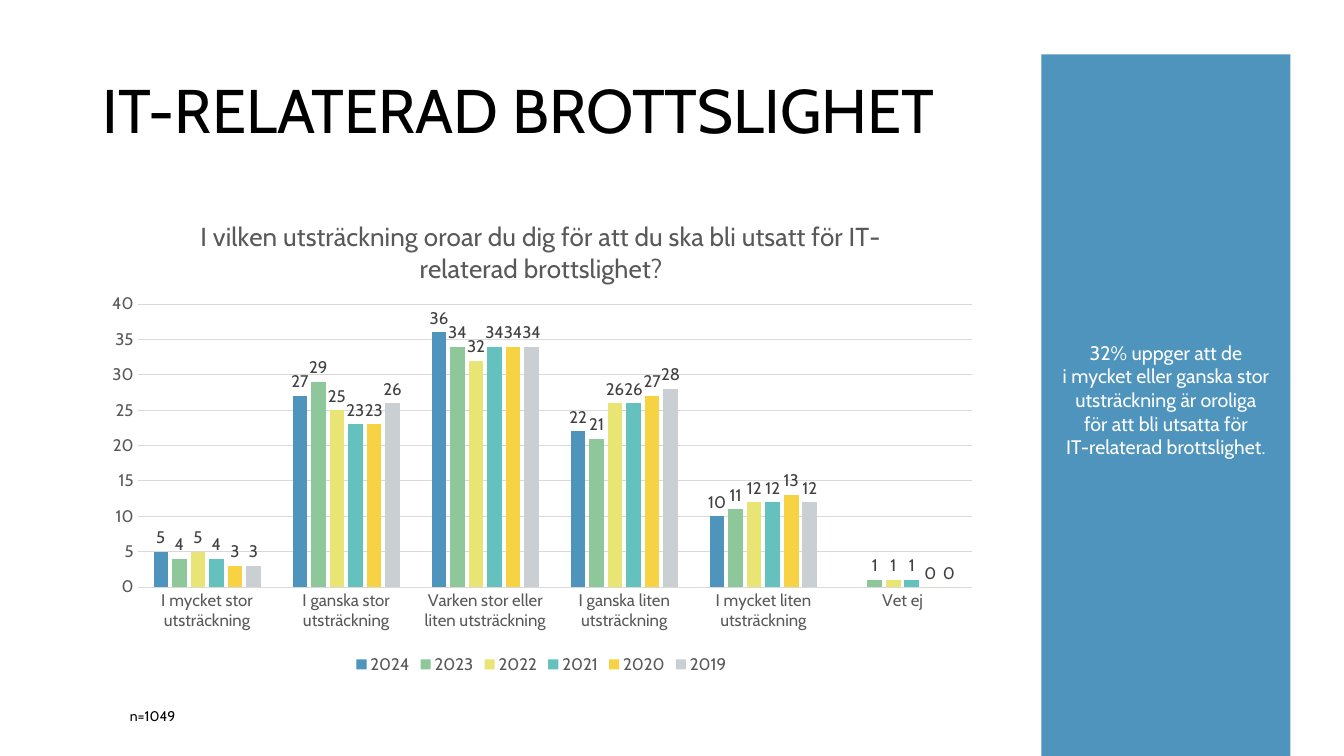
import pptx
import pptx.chart.data
import pptx.dml.color
import pptx.enum.chart
import pptx.enum.shapes
import pptx.enum.text
import pptx.oxml
import pptx.oxml.ns
import pptx.util

FONT = "Cabin"
WIDTH, HEIGHT = pptx.util.Inches(13.33), pptx.util.Inches(7.5)
COLUMNS = ROWS = 100
BLACK, WHITE, GREY, DARK_GREY, LIGHT_GREY = "000000", "FFFFFF", "595959", "404040", "D9D9D9"
BLUE = "4E94BD"

QUESTION = (
    "I vilken utsträckning oroar du dig för att du ska bli utsatt för "
    "IT-relaterad brottslighet?"
)
FINDING = (
    "32% uppger att de\v"
    "i mycket eller ganska stor utsträckning är oroliga\v"
    "för att bli utsatta för\v"
    "IT-relaterad brottslighet."
)
ANSWERS = [
    "I mycket stor utsträckning",
    "I ganska stor utsträckning",
    "Varken stor eller liten utsträckning",
    "I ganska liten utsträckning",
    "I mycket liten utsträckning",
    "Vet ej",
]
YEARS = {
    "2024": (BLUE, [5, 27, 36, 22, 10, None]),
    "2023": ("8DC79A", [4, 29, 34, 21, 11, 1]),
    "2022": ("E8E575", [5, 25, 32, 26, 12, 1]),
    "2021": ("65C1BE", [4, 23, 34, 26, 12, 1]),
    "2020": ("F7D243", [3, 23, 34, 27, 13, 0]),
    "2019": ("CACFD3", [3, 26, 34, 28, 12, 0]),
}
PLOT_AREA = {"x": 0.05, "y": 0.22, "w": 0.93, "h": 0.59}


def grid_box(left, top, columns, rows):
    column, row = WIDTH / COLUMNS, HEIGHT / ROWS
    return [round(length) for length in (left * column, top * row, columns * column, rows * row)]


def set_values(target, values):
    for name, value in values.items():
        setattr(target, name, value)


def paint(color_format, color):
    color_format.rgb = pptx.dml.color.RGBColor.from_string(color)


def style_font(font, size, color):
    set_values(font, {"name": FONT, "size": pptx.util.Pt(size), "bold": False})
    paint(font.color, color)


def style_line(line, color):
    line.width = pptx.util.Pt(0.75)
    line.fill.solid()
    paint(line.fill.fore_color, color)


def write_text(shape, text, size, color, paragraph_values, frame_values):
    frame = shape.text_frame
    set_values(frame, {"word_wrap": True, **frame_values})
    paragraph = frame.paragraphs[0]
    paragraph.text = text
    set_values(paragraph, paragraph_values)
    for run in paragraph.runs:
        style_font(run.font, size, color)


def add_heading(slide, box):
    write_text(
        slide.shapes.add_textbox(*box), "IT-RELATERAD BROTTSLIGHET", 44, BLACK,
        {"line_spacing": 0.9},
        {"vertical_anchor": pptx.enum.text.MSO_ANCHOR.MIDDLE},
    )


def add_sample_note(slide, box):
    write_text(slide.shapes.add_textbox(*box), "n=1049", 10, BLACK, {}, {})


def add_finding_panel(slide, box):
    panel = slide.shapes.add_shape(pptx.enum.shapes.MSO_SHAPE.RECTANGLE, *box)
    panel.shadow.inherit = False
    panel.fill.solid()
    paint(panel.fill.fore_color, BLUE)
    panel.line.fill.background()
    write_text(
        panel, FINDING, 14, WHITE,
        {"alignment": pptx.enum.text.PP_ALIGN.CENTER},
        {
            "vertical_anchor": pptx.enum.text.MSO_ANCHOR.MIDDLE,
            "margin_bottom": pptx.util.Inches(0.28),
        },
    )


def fix_plot_area(chart):
    plot_area = chart.plots[0]._element.getparent()
    for old_layout in plot_area.findall(pptx.oxml.ns.qn("c:layout")):
        plot_area.remove(old_layout)
    sizes = "".join(f'<c:{key} val="{share}"/>' for key, share in PLOT_AREA.items())
    plot_area.insert(0, pptx.oxml.parse_xml(
        f'<c:layout {pptx.oxml.ns.nsdecls("c")}><c:manualLayout>'
        '<c:layoutTarget val="inner"/><c:xMode val="edge"/><c:yMode val="edge"/>'
        f"{sizes}</c:manualLayout></c:layout>"
    ))


def style_axes(chart):
    no_tick = pptx.enum.chart.XL_TICK_MARK.NONE
    for axis in (chart.category_axis, chart.value_axis):
        set_values(axis, {"major_tick_mark": no_tick, "minor_tick_mark": no_tick})
        style_font(axis.tick_labels.font, 12, GREY)
    style_line(chart.category_axis.format.line, LIGHT_GREY)
    set_values(chart.value_axis, {
        "minimum_scale": 0, "maximum_scale": 40, "major_unit": 5, "has_major_gridlines": True,
    })
    chart.value_axis.format.line.fill.background()
    style_line(chart.value_axis.major_gridlines.format.line, LIGHT_GREY)


def style_series(series, color):
    series.invert_if_negative = False
    series.format.fill.solid()
    paint(series.format.fill.fore_color, color)
    set_values(series.data_labels, {
        "show_value": True,
        "position": pptx.enum.chart.XL_LABEL_POSITION.OUTSIDE_END,
    })
    style_font(series.data_labels.font, 12, DARK_GREY)


def add_worry_chart(slide, box):
    data = pptx.chart.data.CategoryChartData(number_format="0")
    data.categories = ANSWERS
    for year, (color, shares) in YEARS.items():
        data.add_series(year, shares)
    chart = slide.shapes.add_chart(
        pptx.enum.chart.XL_CHART_TYPE.COLUMN_CLUSTERED, *box, data
    ).chart
    style_font(chart.font, 10, BLACK)
    set_values(chart, {"has_title": True, "has_legend": True})
    title = chart.chart_title.text_frame.paragraphs[0]
    title.text = QUESTION
    style_font(title.runs[0].font, 18.6, GREY)
    set_values(chart.legend, {
        "position": pptx.enum.chart.XL_LEGEND_POSITION.BOTTOM, "include_in_layout": False,
    })
    style_font(chart.legend.font, 12, GREY)
    plot = chart.plots[0]
    set_values(plot, {"gap_width": 219, "overlap": -27, "vary_by_categories": False})
    for series in plot.series:
        style_series(series, YEARS[series.name][0])
    style_axes(chart)
    fix_plot_area(chart)


def main():
    presentation = pptx.Presentation()
    set_values(presentation, {"slide_width": WIDTH, "slide_height": HEIGHT})
    slide = presentation.slides.add_slide(presentation.slide_layouts[6])
    add_finding_panel(slide, grid_box(77.49, 7.2, 18.53, 94.4))
    add_heading(slide, grid_box(6.9, 5.33, 86.27, 19.33))
    add_worry_chart(slide, grid_box(6.9, 26.27, 66.77, 63.47))
    add_sample_note(slide, grid_box(8.93, 92.93, 74.27, 3.6))
    presentation.save("out.pptx")


if __name__ == "__main__":
    main()
